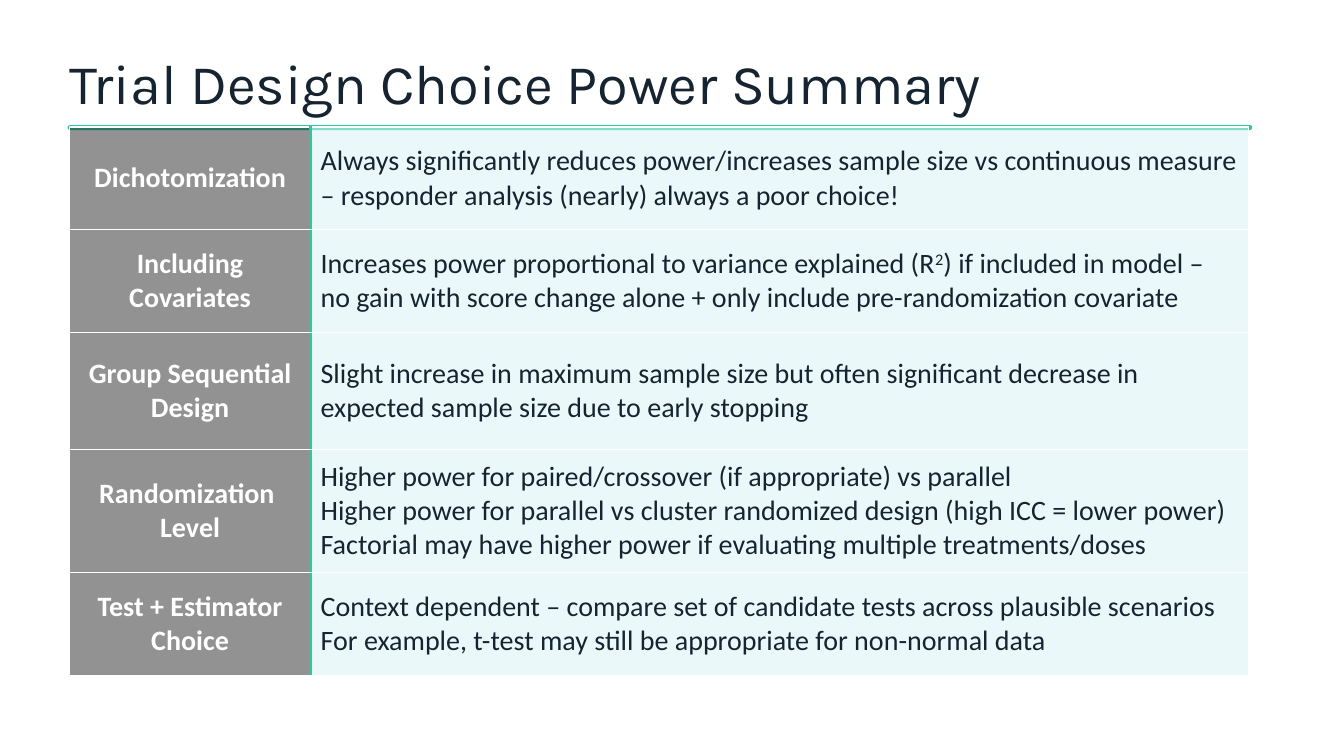
from pptx import Presentation
from pptx.dml.color import RGBColor
from pptx.enum.shapes import MSO_SHAPE
from pptx.enum.text import MSO_ANCHOR, MSO_AUTO_SIZE, PP_ALIGN
from pptx.oxml import parse_xml
from pptx.oxml.ns import nsdecls, qn
from pptx.util import Inches, Pt
from lxml.etree import SubElement

# Content: label lines, text lines, row height; "^" marks a superscript digit
TITLE = "Trial Design Choice Power Summary"
ROWS = [
    (["Dichotomization"],
     ["Always significantly reduces power/increases sample size vs continuous "
      "measure – responder analysis (nearly) always a poor choice!"], 1.02),
    (["Including Covariates"],
     ["Increases power proportional to variance explained (R^2) if included in "
      "model – no gain with score change alone + only include "
      "pre-randomization covariate"], 1.02),
    (["Group Sequential Design"],
     ["Slight increase in maximum sample size but often significant decrease in "
      "expected sample size due to early stopping"], 1.16),
    (["Randomization ", "Level"],
     ["Higher power for paired/crossover (if appropriate) vs parallel",
      "Higher power for parallel vs cluster randomized design "
      "(high ICC = lower power)",
      "Factorial may have higher power if evaluating multiple treatments/doses"],
     1.16),
    (["Test + Estimator Choice"],
     ["Context dependent – compare set of candidate tests across plausible "
      "scenarios",
      "For example, t-test may still be appropriate for non-normal data"], 1.02),
]
COLS = (2.39, 9.3)
LEFT, TOP = 0.69, 1.26

THEME = {
    "ink": "152430", "white": "FFFFFF", "green": "2EC99B",
    "label": "262626", "body": "D6F2F6", "alpha": 50,
    "head": ("Karla", 40), "text": ("Calibri", 20),
}


def style(font, face, ink, bold=False):
    name, size = face
    looks = {"name": name, "size": Pt(size), "bold": bold}
    for key, value in looks.items():
        setattr(font, key, value)
    font.color.rgb = RGBColor.from_string(THEME[ink])


def shade(cell, tone):
    cell.fill.solid()
    cell.fill.fore_color.rgb = RGBColor.from_string(THEME[tone])
    color = cell._tc.tcPr.find(qn("a:solidFill"))[0]
    SubElement(color, qn("a:alpha"), val=str(THEME["alpha"] * 1000))


def edge(cell, sides):
    """Put border lines, in L, R, T, B order, ahead of the cell's fill."""
    for spot, (side, tone, width) in enumerate(sides):
        line = parse_xml(
            f'<a:ln{side} {nsdecls("a")} w="{Pt(width)}"><a:solidFill>'
            f'<a:srgbClr val="{THEME[tone]}"/></a:solidFill></a:ln{side}>')
        cell._tc.tcPr.insert(spot, line)


def write(cell, lines, ink, bold, align):
    frame = cell.text_frame
    for i, line in enumerate(lines):
        para = frame.paragraphs[0] if i == 0 else frame.add_paragraph()
        para.alignment = align
        head, mark, tail = line.partition("^")
        for text, base in ((head, 0), (tail[:1], 30), (tail[1:], 0)):
            if text:
                run = para.add_run()
                run.text = text
                style(run.font, THEME["text"], ink, bold)
                if base:
                    run._r.get_or_add_rPr().set("baseline", str(base * 1000))


def main():
    deck = Presentation()
    deck.slide_width, deck.slide_height = Inches(13.33), Inches(7.5)
    slide = deck.slides.add_slide(deck.slide_layouts[5])

    # Title
    title = slide.shapes.title
    place = {"left": LEFT, "top": 0.38, "width": 12.16, "height": 0.78}
    for key, value in place.items():
        setattr(title, key, Inches(value))
    frame = title.text_frame
    frame.text = TITLE
    setup = {"margin_left": 0, "margin_right": 0, "margin_top": 0,
             "margin_bottom": 0, "word_wrap": True,
             "auto_size": MSO_AUTO_SIZE.NONE,
             "vertical_anchor": MSO_ANCHOR.BOTTOM}
    for key, value in setup.items():
        setattr(frame, key, value)
    para = frame.paragraphs[0]
    para.alignment, para.line_spacing = PP_ALIGN.LEFT, 0.9
    style(para.runs[0].font, THEME["head"], "ink")

    # Rule under the title
    rule = slide.shapes.add_shape(MSO_SHAPE.ROUNDED_RECTANGLE, Inches(0.67),
                                  Inches(1.24), Inches(11.75), Inches(0.05))
    rule.adjustments[0] = 0.5
    rule.shadow.inherit = False
    rule.fill.solid()
    rule.fill.fore_color.rgb = RGBColor.from_string(THEME["green"])
    rule.line.fill.background()

    # Summary table
    high = sum(row[2] for row in ROWS)
    table = slide.shapes.add_table(
        len(ROWS), len(COLS), Inches(LEFT), Inches(TOP),
        Inches(sum(COLS)), Inches(high)).table
    table.first_row = table.horz_banding = False
    for col, width in zip(table.columns, COLS):
        col.width = Inches(width)

    kinds = (("label", "white", True, PP_ALIGN.CENTER, "R"),
             ("body", "ink", False, PP_ALIGN.LEFT, "L"))
    for r, (label, body, height) in enumerate(ROWS):
        table.rows[r].height = Inches(height)
        for c, (lines, kind) in enumerate(zip((label, body), kinds)):
            tone, ink, bold, align, side = kind
            cell = table.cell(r, c)
            cell.vertical_anchor = MSO_ANCHOR.MIDDLE
            for name in ("left", "right", "top", "bottom"):
                setattr(cell, f"margin_{name}", Inches(0.1))
            write(cell, lines, ink, bold, align)
            shade(cell, tone)
            sides = [(side, "green", 3), ("T", "white", 1), ("B", "white", 1)]
            if r == 0:
                del sides[1]
            edge(cell, sides)

    deck.save("out.pptx")


if __name__ == "__main__":
    main()
